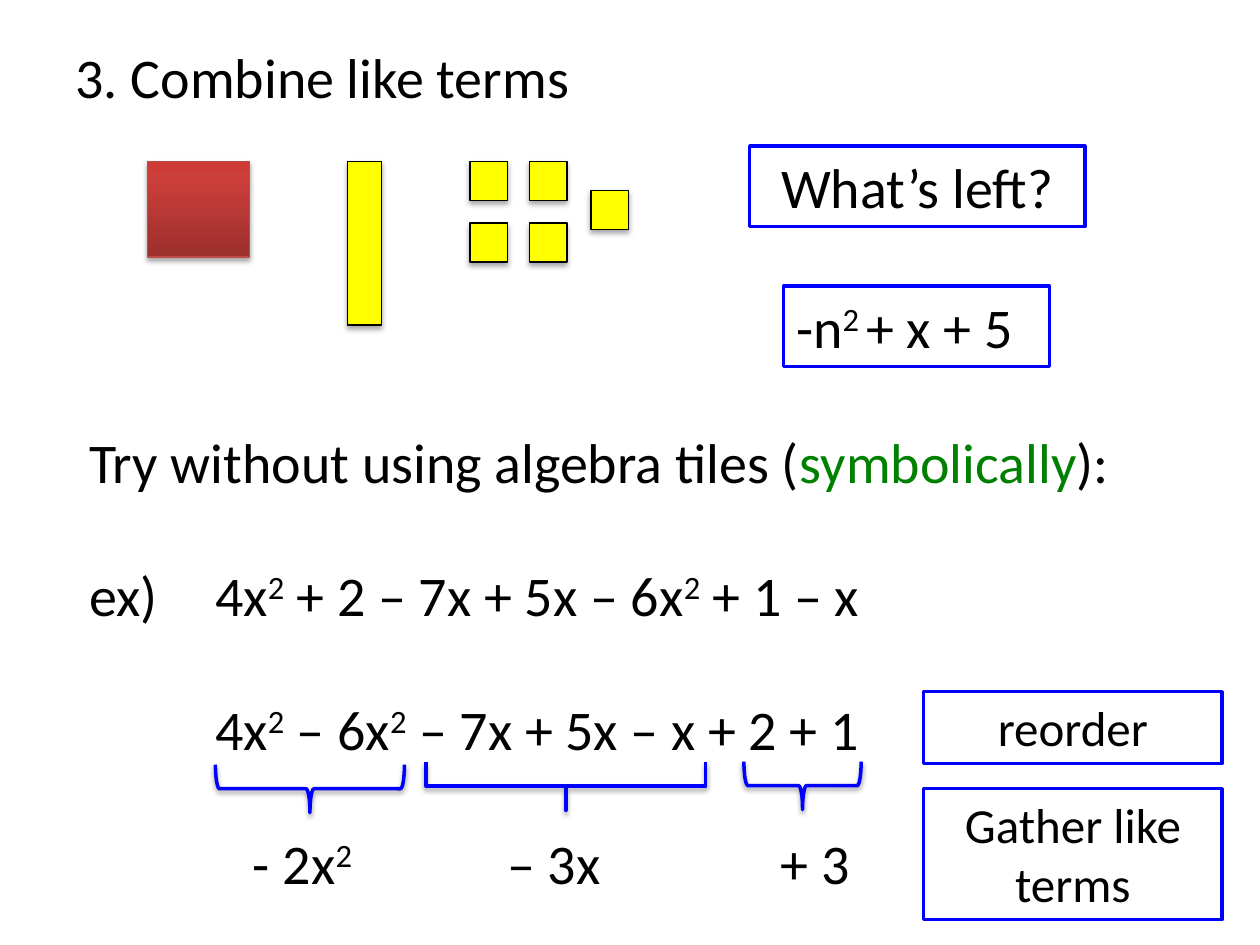
from copy import deepcopy
from dataclasses import dataclass
from itertools import product
from typing import Optional

from lxml.etree import SubElement
from pptx import Presentation
from pptx.dml.color import RGBColor
from pptx.enum.shapes import MSO_SHAPE
from pptx.enum.text import MSO_ANCHOR, MSO_AUTO_SIZE, PP_ALIGN
from pptx.oxml.ns import qn
from pptx.util import Pt

COLORS = {
    "ink": "000000",
    "paper": "FFFFFF",
    "outline": "0000FF",
    "emphasis": "008000",
    "positive": "FFFF00",
    "negative_dark": "9C2F2D",
    "negative_mid": "CB3E3A",
    "negative_light": "CE3B37",
    "negative_edge": "BF4C48",
}


@dataclass(frozen=True)
class Piece:
    text: str
    color: str = "ink"
    raised: bool = False


@dataclass(frozen=True)
class Tile:
    left: float
    top: float
    width: float = 21.6
    height: float = 22.3
    positive: bool = True


@dataclass(frozen=True)
class Callout:
    pieces: tuple
    left: float
    top: float
    width: float
    height: float
    size: int = 32
    align: PP_ALIGN = PP_ALIGN.CENTER


@dataclass(frozen=True)
class Brace:
    center: float
    top: float
    width: float
    curl: Optional[float] = None


@dataclass(frozen=True)
class Line:
    pieces: tuple
    tabs: tuple = (72,)


SQUARED = Piece("2", raised=True)
UNIT_COLUMNS, UNIT_ROWS = (268.6, 302.4), (92.2, 127.4)

TILES = [
    Tile(84.2, 92.2, 58.3, 54.7, positive=False),
    Tile(198.7, 92.2, 19.4, 93.6),
    Tile(337.7, 108.7),
    *(Tile(left, top) for left, top in product(UNIT_COLUMNS, UNIT_ROWS)),
]

CALLOUTS = [
    Callout((Piece("What’s left?"),), 428.4, 83.5, 191.5, 46.1),
    Callout((Piece("-n"), Piece("2 ", raised=True), Piece("+ x + 5")),
            447.8, 163.4, 151.9, 46.1, align=PP_ALIGN.LEFT),
    Callout((Piece("reorder"),), 527.8, 395.3, 170.6, 41, size=28),
    Callout((Piece("Gather like terms"),), 527.8, 450.7, 170.6, 74.9, size=28),
]

BRACES = [
    Brace(177.1, 437, 108),
    Brace(323.3, 435.6, 159.8, curl=0),
    Brace(458.6, 435.2, 67),
]

WORK = [
    Line((Piece("Try without using algebra tiles ("),
          Piece("symbolically", "emphasis"), Piece("):"))),
    Line((Piece("ex)\t4x"), SQUARED, Piece(" + 2 – 7x + 5x – 6x"),
          SQUARED, Piece(" + 1 – x"))),
    Line((Piece("\t4x"), SQUARED, Piece(" – 6x"), SQUARED,
          Piece(" – 7x + 5x – x + 2 + 1"))),
    Line((Piece("\t- 2x"), SQUARED, Piece("\t– 3x\t+ 3")), (93.6, 239, 395)),
]


def rgb(name: str) -> RGBColor:
    return RGBColor.from_string(COLORS[name])


def write(paragraph, pieces: tuple, *, size: int = 32,
          align: PP_ALIGN = PP_ALIGN.LEFT, before: float = 0,
          tabs: tuple = ()) -> None:
    paragraph.alignment = align
    paragraph.space_before = Pt(before)
    if tabs:
        stops = SubElement(paragraph._p.get_or_add_pPr(), qn("a:tabLst"))
        for position in tabs:
            SubElement(stops, qn("a:tab"), pos=str(Pt(position)), algn="l")
    for piece in pieces:
        run = paragraph.add_run()
        run.text = piece.text
        run.font.name = "Calibri"
        run.font.size = Pt(size)
        run.font.color.rgb = rgb(piece.color)
        if piece.raised:
            run.font._element.set("baseline", "30000")


def cast_shadow(shape, distance: float, opacity: int) -> None:
    effects = shape._element.spPr.find(qn("a:effectLst"))
    shadow = SubElement(effects, qn("a:outerShdw"), blurRad=str(Pt(3.1)),
                        dist=str(Pt(distance)), dir="5400000", rotWithShape="0")
    black = SubElement(shadow, qn("a:srgbClr"), val=COLORS["ink"])
    SubElement(black, qn("a:alpha"), val=str(opacity * 1000))


def add_outlined(slide, kind: MSO_SHAPE, left: float, top: float, width: float,
                 height: float, line: str, weight: float):
    shape = slide.shapes.add_shape(kind, Pt(left), Pt(top), Pt(width), Pt(height))
    shape.shadow.inherit = False
    shape.line.color.rgb = rgb(line)
    shape.line.width = Pt(weight)
    return shape


def shade_negative(fill) -> None:
    fill.gradient()
    fill.gradient_angle = 90
    stops = fill._xPr.find(".//" + qn("a:gsLst"))
    stops.append(deepcopy(stops[-1]))
    stops[1].set("pos", "80000")
    names = ("negative_dark", "negative_mid", "negative_light")
    for stop, name in zip(fill.gradient_stops, names):
        stop.color.rgb = rgb(name)


def add_tile(slide, tile: Tile) -> None:
    edge = "ink" if tile.positive else "negative_edge"
    shape = add_outlined(slide, MSO_SHAPE.RECTANGLE, tile.left, tile.top,
                         tile.width, tile.height, edge, 0.75)
    if tile.positive:
        shape.fill.solid()
        shape.fill.fore_color.rgb = rgb("positive")
    else:
        shade_negative(shape.fill)
    cast_shadow(shape, 1.8, 35)


def add_callout(slide, callout: Callout) -> None:
    shape = add_outlined(slide, MSO_SHAPE.RECTANGLE, callout.left, callout.top,
                         callout.width, callout.height, "outline", 2)
    shape.fill.solid()
    shape.fill.fore_color.rgb = rgb("paper")
    frame = shape.text_frame
    frame.word_wrap = True
    frame.vertical_anchor = MSO_ANCHOR.TOP
    frame.auto_size = MSO_AUTO_SIZE.SHAPE_TO_FIT_TEXT
    write(frame.paragraphs[0], callout.pieces, size=callout.size, align=callout.align)


def add_brace(slide, brace: Brace, depth: float = 27.4) -> None:
    shape = add_outlined(slide, MSO_SHAPE.RIGHT_BRACE, brace.center - depth / 2,
                         brace.top + (depth - brace.width) / 2, depth,
                         brace.width, "outline", 2)
    shape.rotation = 90
    shape.fill.background()
    if brace.curl is not None:
        shape.adjustments[0] = brace.curl
    cast_shadow(shape, 1.6, 38)


def add_heading(slide) -> None:
    heading = slide.shapes.title
    heading.left, heading.top = Pt(36), Pt(20.9)
    heading.width, heading.height = Pt(648), Pt(219.6)
    frame = heading.text_frame
    frame.vertical_anchor = MSO_ANCHOR.TOP
    frame.auto_size = MSO_AUTO_SIZE.NONE
    write(frame.paragraphs[0], (Piece("3. Combine like terms"),))


def add_work(slide) -> None:
    frame = slide.shapes.add_textbox(Pt(43.9), Pt(240.5), Pt(631.4), Pt(278.6)).text_frame
    frame.word_wrap = True
    for index, line in enumerate(WORK):
        paragraph = frame.add_paragraph() if index else frame.paragraphs[0]
        write(paragraph, line.pieces, before=38 if index else 0, tabs=line.tabs)


def main() -> None:
    deck = Presentation()
    deck.slide_width, deck.slide_height = Pt(720), Pt(540)
    slide = deck.slides.add_slide(deck.slide_layouts[5])
    add_heading(slide)
    for tile in TILES:
        add_tile(slide, tile)
    add_work(slide)
    for brace in BRACES:
        add_brace(slide, brace)
    for callout in CALLOUTS:
        add_callout(slide, callout)
    deck.save("out.pptx")


if __name__ == "__main__":
    main()
